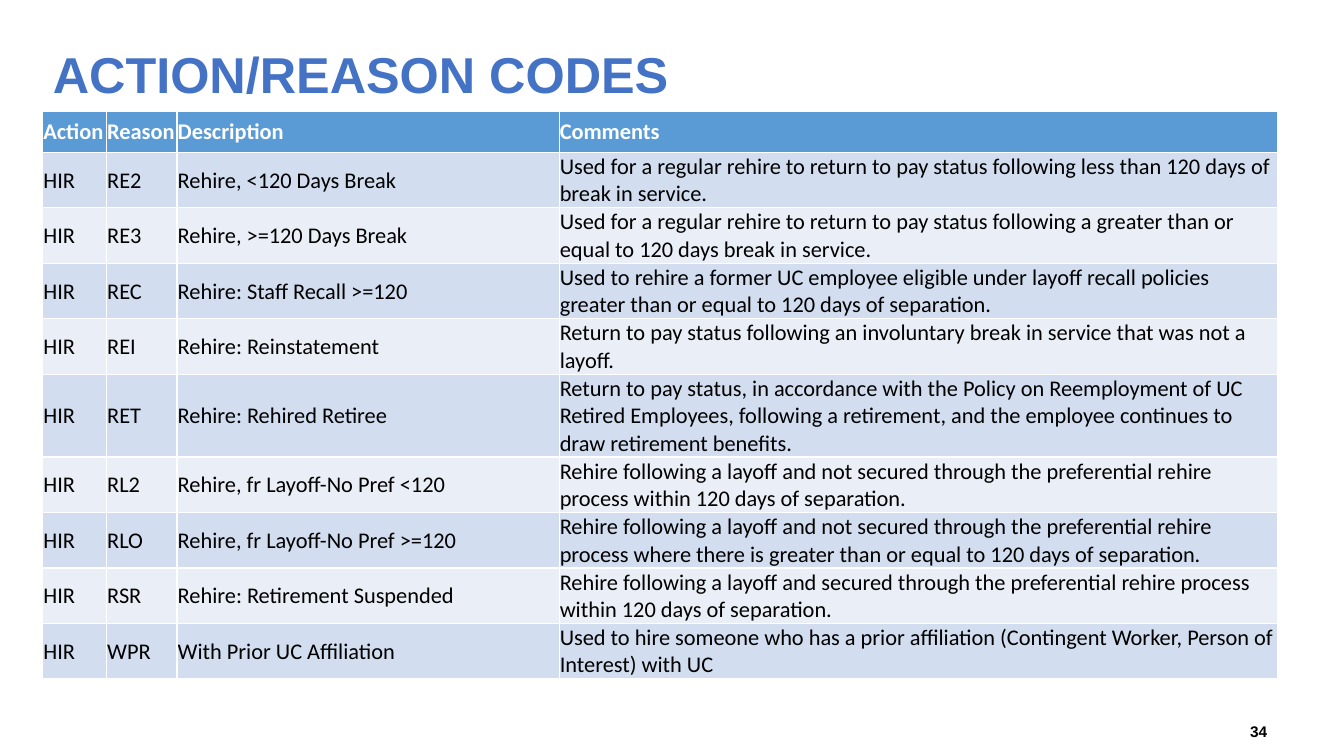
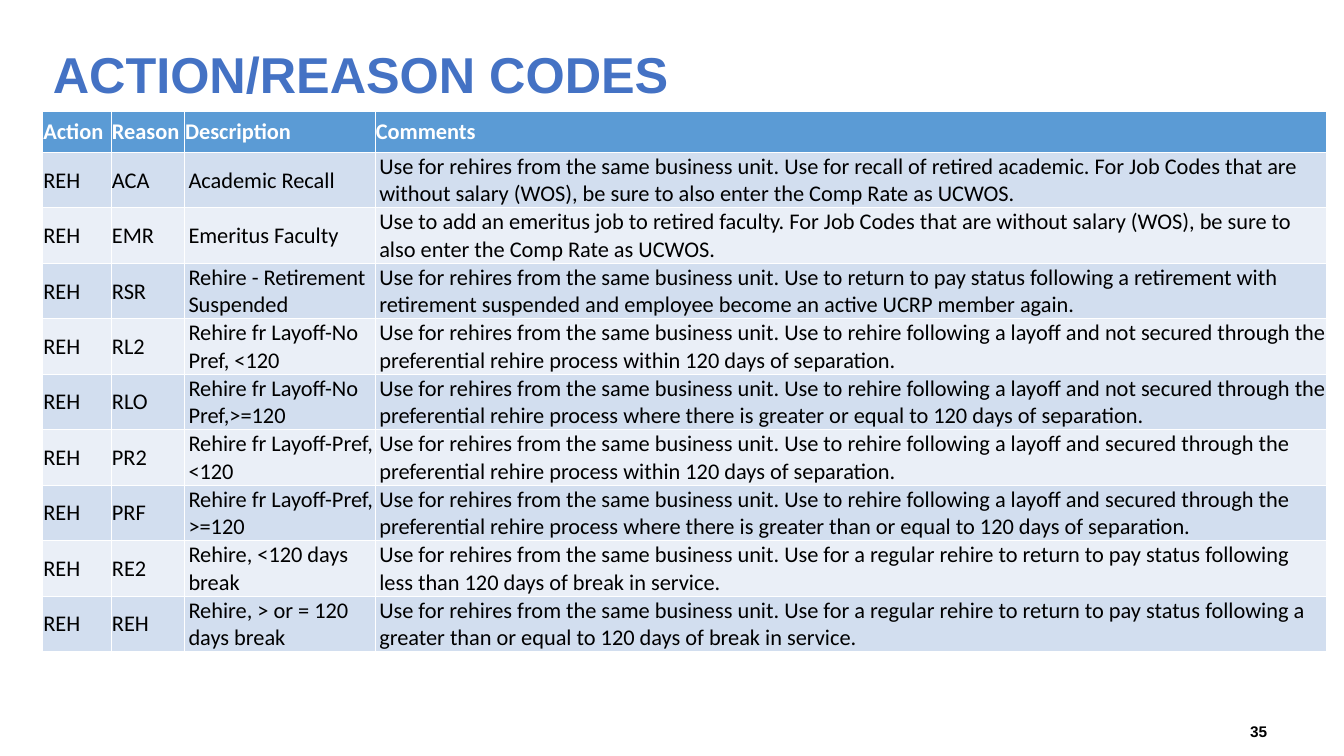
from dataclasses import dataclass

from pptx import Presentation
from pptx.dml.color import RGBColor
from pptx.enum.text import MSO_ANCHOR, PP_ALIGN
from pptx.util import Pt

MIDDLE = MSO_ANCHOR.MIDDLE
LEFT, RIGHT = PP_ALIGN.LEFT, PP_ALIGN.RIGHT

TITLE_BLUE = "4472C4"
HEADER_BLUE = "5B9BD5"
BANDS = ("D2DEEF", "EAEFF7")
WHITE, BLACK = "FFFFFF", "000000"

TITLE = "ACTION/REASON CODES"
HEADER = ("Action", "Reason", "Description", "Comments")
MARGIN_X = 30.5
TABLE_TOP = 79.3
ROW_HEIGHT = 29.5
INSET = 0.5
SAME_UNIT = "Use for rehires from the same business unit. "
WITHOUT_SALARY = (
    "For Job Codes that are without salary (WOS), "
    "be sure to also enter the Comp Rate as UCWOS."
)


@dataclass(frozen=True)
class CodeTable:
    """One slide of reason codes that share an action."""

    number: int
    action: str
    widths: tuple[float, ...]
    text_indent: float
    rows: tuple[tuple[str, str, str], ...]


REHIRES_AS_HIRE = CodeTable(34, "HIR", (45.6, 50.4, 272.9, 513.5), INSET, (
    ("RE2", "Rehire, <120 Days Break",
     "Used for a regular rehire to return to pay status following less than "
     "120 days of break in service."),
    ("RE3", "Rehire, >=120 Days Break",
     "Used for a regular rehire to return to pay status following a greater "
     "than or equal to 120 days break in service."),
    ("REC", "Rehire: Staff Recall >=120",
     "Used to rehire a former UC employee eligible under layoff recall "
     "policies greater than or equal to 120 days of separation."),
    ("REI", "Rehire: Reinstatement",
     "Return to pay status following an involuntary break in service that "
     "was not a layoff."),
    ("RET", "Rehire: Rehired Retiree",
     "Return to pay status, in accordance with the Policy on Reemployment of "
     "UC Retired Employees, following a retirement, and the employee "
     "continues to draw retirement benefits."),
    ("RL2", "Rehire, fr Layoff-No Pref <120",
     "Rehire following a layoff and not secured through the preferential "
     "rehire process within 120 days of separation."),
    ("RLO", "Rehire, fr Layoff-No Pref >=120",
     "Rehire following a layoff and not secured through the preferential "
     "rehire process where there is greater than or equal to 120 days of "
     "separation."),
    ("RSR", "Rehire: Retirement Suspended",
     "Rehire following a layoff and secured through the preferential rehire "
     "process within 120 days of separation."),
    ("WPR", "With Prior UC Affiliation",
     "Used to hire someone who has a prior affiliation (Contingent Worker, "
     "Person of Interest) with UC"),
))

REHIRES = CodeTable(35, "REH", (49, 52.2, 136.3, 679.7), 3, (
    ("ACA", "Academic Recall",
     SAME_UNIT + "Use for recall of retired academic. " + WITHOUT_SALARY),
    ("EMR", "Emeritus Faculty",
     "Use to add an emeritus job to retired faculty. " + WITHOUT_SALARY),
    ("RSR", "Rehire - Retirement Suspended",
     SAME_UNIT + "Use to return to pay status following a retirement with "
     "retirement suspended and employee become an active UCRP member again."),
    ("RL2", "Rehire fr Layoff-No Pref, <120",
     SAME_UNIT + "Use to rehire following a layoff and not secured through "
     "the preferential rehire process within 120 days of separation."),
    ("RLO", "Rehire fr Layoff-No Pref,>=120",
     SAME_UNIT + "Use to rehire following a layoff and not secured through "
     "the preferential rehire process where there is greater or equal to "
     "120 days of separation."),
    ("PR2", "Rehire fr Layoff-Pref, <120",
     SAME_UNIT + "Use to rehire following a layoff and secured through the "
     "preferential rehire process within 120 days of separation."),
    ("PRF", "Rehire fr Layoff-Pref, >=120",
     SAME_UNIT + "Use to rehire following a layoff and secured through the "
     "preferential rehire process where there is greater than or equal to "
     "120 days of separation."),
    ("RE2", "Rehire, <120 days break",
     SAME_UNIT + "Use for a regular rehire to return to pay status following "
     "less than 120 days of break in service."),
    ("REH", "Rehire, > or = 120 days break",
     SAME_UNIT + "Use for a regular rehire to return to pay status following "
     "a greater than or equal to 120 days of break in service."),
))


def rgb(color: str) -> RGBColor:
    """Turn a hex string into a colour."""
    return RGBColor.from_string(color)


def write(tf, text: str, font: str, size: float, color: str,
          bold: bool, align=LEFT) -> None:
    """Fill a text frame with one formatted paragraph."""
    tf.text = text
    p = tf.paragraphs[0]
    p.alignment = align
    p.font.name, p.font.size, p.font.bold = font, Pt(size), bold
    p.font.color.rgb = rgb(color)


def place(sp, left: float, top: float, width: float, height: float) -> None:
    """Set a shape's position and size in points."""
    sp.left, sp.top = Pt(left), Pt(top)
    sp.width, sp.height = Pt(width), Pt(height)


def add_title(s) -> None:
    """Move and format the title placeholder."""
    sp = s.shapes.title
    place(sp, MARGIN_X, 25.2, 863, 54)
    write(sp.text_frame, TITLE, "Arial", 36, TITLE_BLUE, True)
    sp.text_frame.vertical_anchor = MIDDLE


def add_number(s, number: int) -> None:
    """Add the slide number at the bottom right."""
    sp = s.shapes.add_textbox(Pt(688.3), Pt(510.5), Pt(224), Pt(24))
    tf = sp.text_frame
    tf.word_wrap = True
    tf.vertical_anchor = MIDDLE
    write(tf, str(number), "Arial", 11, BLACK, True, RIGHT)


def add_codes(s, codes: CodeTable) -> None:
    """Add the table with its header and banded rows."""
    rows = [HEADER] + [(codes.action, *row) for row in codes.rows]
    table = s.shapes.add_table(
        len(rows), len(HEADER), Pt(MARGIN_X), Pt(TABLE_TOP),
        Pt(sum(codes.widths)), Pt(ROW_HEIGHT * len(rows))).table
    for column, width in zip(table.columns, codes.widths):
        column.width = Pt(width)
    for i, row in enumerate(rows):
        is_header = i == 0
        fill = HEADER_BLUE if is_header else BANDS[(i - 1) % 2]
        for j, text in enumerate(row):
            cell = table.cell(i, j)
            indented = not is_header and j >= 2
            cell.margin_left = Pt(codes.text_indent if indented else INSET)
            cell.margin_right = cell.margin_bottom = 0
            cell.margin_top = Pt(INSET)
            cell.vertical_anchor = MIDDLE
            cell.fill.solid()
            cell.fill.fore_color.rgb = rgb(fill)
            write(cell.text_frame, text, "Calibri", 16,
                  WHITE if is_header else BLACK, is_header)


def main() -> None:
    """Build the presentation."""
    prs = Presentation()
    prs.slide_width, prs.slide_height = Pt(960), Pt(540)
    layout = prs.slide_layouts.get_by_name("Title Only")
    for codes in (REHIRES_AS_HIRE, REHIRES):
        s = prs.slides.add_slide(layout)
        add_title(s)
        add_codes(s, codes)
        add_number(s, codes.number)
    prs.save("out.pptx")


if __name__ == "__main__":
    main()
